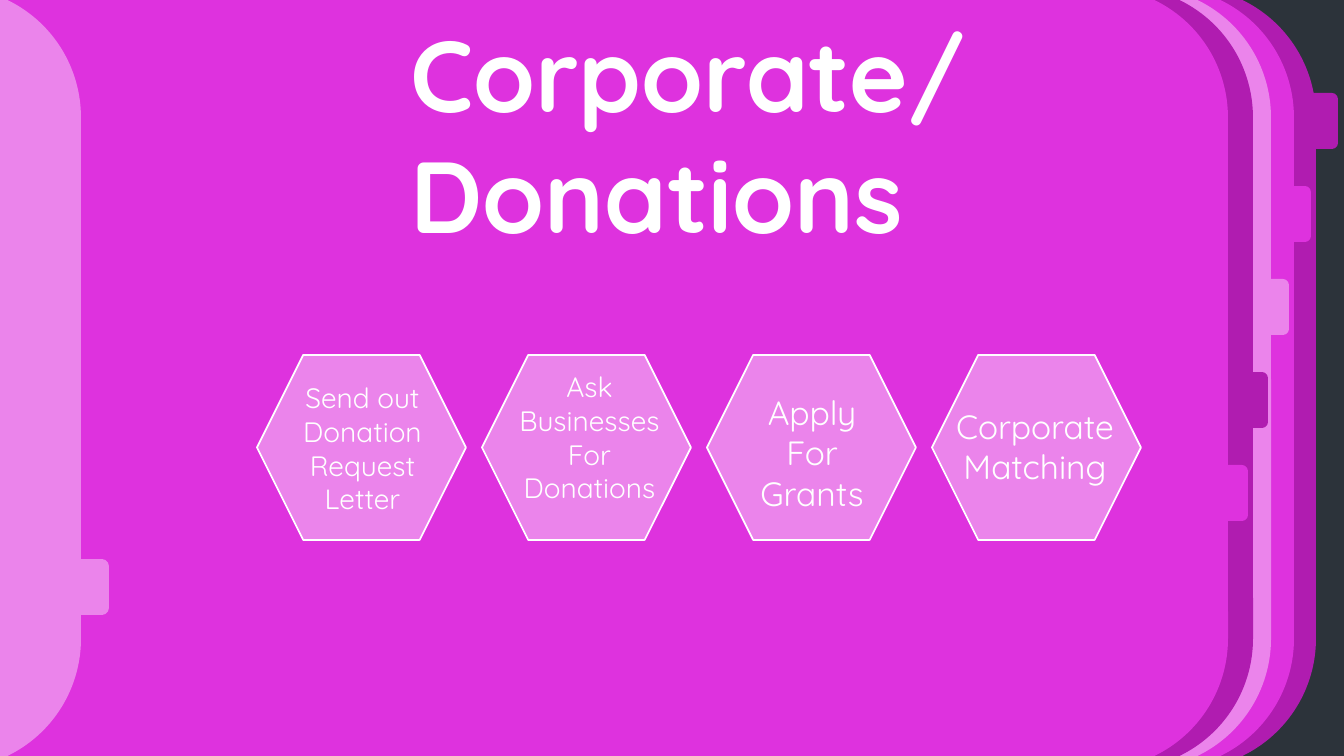
from dataclasses import dataclass

from pptx import Presentation
from pptx.dml.color import RGBColor
from pptx.enum.shapes import MSO_SHAPE
from pptx.enum.text import MSO_ANCHOR, MSO_AUTO_SIZE, PP_ALIGN
from pptx.util import Emu, Pt

ROUNDED = MSO_SHAPE.ROUNDED_RECTANGLE
HEXAGON = MSO_SHAPE.HEXAGON
TOP = MSO_ANCHOR.TOP
GROW = MSO_AUTO_SIZE.SHAPE_TO_FIT_TEXT
LEFT, CENTER = PP_ALIGN.LEFT, PP_ALIGN.CENTER

EMU_PER_PX = 914400 / 100.8
SLIDE_WIDTH, SLIDE_HEIGHT = 1344, 756
TITLE_ONLY_LAYOUT = 5


@dataclass(frozen=True)
class Theme:
    """Colours, font and type sizes of the slide."""
    background: RGBColor = RGBColor(0x2C, 0x33, 0x3A)
    dark: RGBColor = RGBColor(0xB0, 0x1C, 0xB0)
    vivid: RGBColor = RGBColor(0xDE, 0x32, 0xDE)
    light: RGBColor = RGBColor(0xEB, 0x84, 0xEB)
    white: RGBColor = RGBColor(0xFF, 0xFF, 0xFF)
    font: str = "Quicksand"
    title: Pt = Pt(72)
    label: Pt = Pt(24)
    small_label: Pt = Pt(20)
    outline: Pt = Pt(1.25)


THEME = Theme()

PAGES = [
    (1316, 1338, THEME.dark),
    (1294, 1311, THEME.vivid),
    (1271, 1289, THEME.light),
    (1253, 1268, THEME.dark),
    (1228, 1248, THEME.vivid),
]
PAGE_TOP, PAGE_HEIGHT = -13, 782
TAB_PITCH, TAB_WIDTH, TAB_HEIGHT = 93, 35, 56

STEPS = [
    ((263, 376, 199, 146), ["Send out", "Donation Request Letter"], THEME.small_label),
    ((496, 365, 187, 146), ["Ask", "Businesses", "For", "Donations"], THEME.small_label),
    ((704, 387, 216, 132), ["Apply", "For", "Grants"], THEME.label),
    ((935, 401, 200, 92), ["Corporate", "Matching"], THEME.label),
]
STEP_LEFT, STEP_TOP, STEP_PITCH = 257, 355, 225
STEP_WIDTH, STEP_HEIGHT = 209, 185


def px(length):
    """Turn a length in px into EMU."""
    return Emu(round(length * EMU_PER_PX))


def add_filled_shape(slide, kind, box, color, line_color=None):
    """Add a flat preset shape, outlined only if a line colour is given."""
    shape = slide.shapes.add_shape(kind, *map(px, box))
    shape.shadow.inherit = False
    shape.fill.solid()
    shape.fill.fore_color.rgb = color
    if line_color is None:
        shape.line.fill.background()
    else:
        shape.line.color.rgb = line_color
        shape.line.width = THEME.outline


def add_page(slide, page_left, page_width, tab_box, color):
    """Add a rounded page with its index tab."""
    page_box = (page_left, PAGE_TOP, page_width, PAGE_HEIGHT)
    for box in (page_box, tab_box):
        add_filled_shape(slide, ROUNDED, box, color)


def write_lines(shape, lines, size, alignment, bold=False):
    """Write one white paragraph per line into a shape."""
    frame = shape.text_frame
    frame.text = "\n".join(lines)
    frame.word_wrap = True
    frame.auto_size = GROW
    frame.vertical_anchor = TOP
    for paragraph in frame.paragraphs:
        paragraph.alignment = alignment
        paragraph.font.name = THEME.font
        paragraph.font.size = size
        paragraph.font.bold = bold
        paragraph.font.color.rgb = THEME.white


def add_label(slide, box, lines, size):
    """Add the centred text of one step."""
    label = slide.shapes.add_textbox(*map(px, box))
    write_lines(label, lines, size, CENTER)


def place_title(slide, box, lines):
    """Move the title placeholder in front of the pages and fill it."""
    title = slide.shapes.title
    title.left, title.top, title.width, title.height = map(px, box)
    write_lines(title, lines, THEME.title, LEFT, bold=True)
    title.element.getparent().append(title.element)


def main():
    """Build the slide and save it."""
    presentation = Presentation()
    presentation.slide_width = px(SLIDE_WIDTH)
    presentation.slide_height = px(SLIDE_HEIGHT)
    slide = presentation.slides.add_slide(presentation.slide_layouts[TITLE_ONLY_LAYOUT])
    slide.background.fill.solid()
    slide.background.fill.fore_color.rgb = THEME.background

    for number, (page_right, tab_right, color) in enumerate(PAGES, start=1):
        tab_box = (tab_right - TAB_WIDTH, number * TAB_PITCH, TAB_WIDTH, TAB_HEIGHT)
        add_page(slide, page_right - SLIDE_WIDTH, SLIDE_WIDTH, tab_box, color)

    for index in range(len(STEPS)):
        box = (STEP_LEFT + index * STEP_PITCH, STEP_TOP, STEP_WIDTH, STEP_HEIGHT)
        add_filled_shape(slide, HEXAGON, box, THEME.light, THEME.white)
    for box, lines, size in STEPS:
        add_label(slide, box, lines, size)

    place_title(slide, (400, 7, 800, 254), ["Corporate/", "Donations"])
    add_page(slide, -1498, 1579, (67, 559, 42, TAB_HEIGHT), THEME.light)
    presentation.save("out.pptx")


if __name__ == "__main__":
    main()
